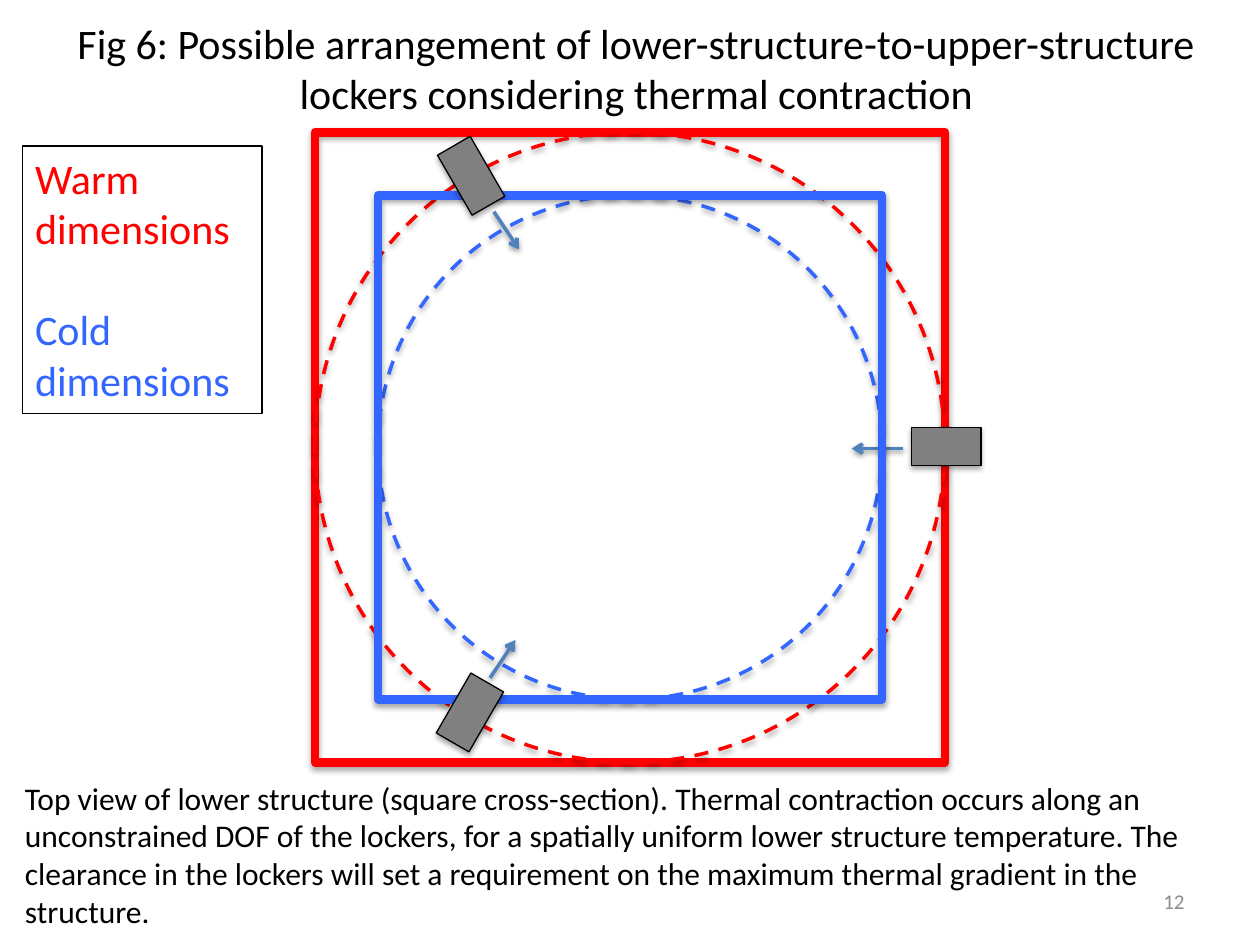
from lxml.etree import SubElement
from pptx import Presentation
from pptx.dml.color import RGBColor
from pptx.enum.dml import MSO_LINE_DASH_STYLE as DASH
from pptx.enum.shapes import MSO_CONNECTOR as CONNECTOR, MSO_SHAPE as SHAPE
from pptx.enum.text import MSO_ANCHOR as ANCHOR, MSO_AUTO_SIZE as FIT, PP_ALIGN as ALIGN
from pptx.oxml.ns import qn
from pptx.util import Inches, Pt

WIDTH, HEIGHT = 10, 7.5
WARM, COLD = "FF0000", "3366FF"
BLACK, GREY, STEEL, PALE = "000000", "808080", "4F81BD", "8C8C8C"

# Offsets from the diagram's centre, as shares of the warm side:
# locker centre, locker rotation, arrow start, arrow end
LOCKERS = [
    ((-0.252, -0.431), -30, (-0.216, -0.374), (-0.176, -0.314)),
    ((-0.254, 0.421), 30, (-0.222, 0.366), (-0.182, 0.306)),
    ((0.502, -0.001), 90, (0.434, 0.002), (0.352, 0.002)),
]
LOCKER_SIZE = (0.06, 0.11)
COLD_SHARE = 0.8


def rgb(value):
    return RGBColor.from_string(value)


def inches(*lengths):
    return [Inches(length) for length in lengths]


def cast_shadow(part, opacity, distance):
    """Soft shadow straight below the part; call after line and fill are set."""
    effects = SubElement(part._element.spPr, qn("a:effectLst"))
    shadow = SubElement(effects, qn("a:outerShdw"), blurRad=str(Pt(3.1)),
                        dist=str(Pt(distance)), dir="5400000", rotWithShape="0")
    tint = SubElement(shadow, qn("a:srgbClr"), val=BLACK)
    SubElement(tint, qn("a:alpha"), val=str(opacity * 1000))


def add_text(slide, box, paragraphs, size=18, align=ALIGN.LEFT,
             anchor=ANCHOR.TOP, border=None, gap=0):
    """Place (text, colour) paragraphs in a box, with a gap between them."""
    area = slide.shapes.add_textbox(*inches(*box))
    if border:
        area.line.color.rgb = rgb(border)
        area.line.width = Pt(0.75)
    frame = area.text_frame
    frame.word_wrap = True
    frame.auto_size = FIT.NONE
    frame.vertical_anchor = anchor
    for index, (text, color) in enumerate(paragraphs):
        paragraph = frame.add_paragraph() if index else frame.paragraphs[0]
        paragraph.alignment = align
        paragraph.space_before = Pt(gap if index else 0)
        run = paragraph.add_run()
        run.text = text
        run.font.name = "Calibri"
        run.font.size = Pt(size)
        run.font.color.rgb = rgb(color)


def add_part(slide, kind, center, size, line, weight, fill=None, dash=None, turn=0):
    (x, y), (width, height) = center, size
    part = slide.shapes.add_shape(
        kind, *inches(x - width / 2, y - height / 2, width, height))
    part.rotation = turn
    if fill:
        part.fill.solid()
        part.fill.fore_color.rgb = rgb(fill)
    else:
        part.fill.background()
    part.line.color.rgb = rgb(line)
    part.line.width = Pt(weight)
    if dash:
        part.line.dash_style = dash
    cast_shadow(part, 35, 1.8)


def add_arrow(slide, start, end):
    arrow = slide.shapes.add_connector(CONNECTOR.STRAIGHT, *inches(*start, *end))
    arrow.line.color.rgb = rgb(STEEL)
    arrow.line.width = Pt(2)
    SubElement(arrow.line._get_or_add_ln(), qn("a:tailEnd"), type="arrow")
    cast_shadow(arrow, 38, 1.6)


def add_diagram(slide, left, top, side):
    center = (left + side / 2, top + side / 2)

    def at(offset):
        return tuple(middle + share * side for middle, share in zip(center, offset))

    def square(color, share):
        add_part(slide, SHAPE.RECTANGLE, center, (side * share,) * 2, color, 5)

    def circle(color, share):
        add_part(slide, SHAPE.OVAL, center, (side * share,) * 2, color, 2, dash=DASH.DASH)

    # Warm and cold outlines, with the contraction arrows between them
    square(WARM, 1)
    circle(WARM, 1)
    circle(COLD, COLD_SHARE)
    for _, _, start, end in LOCKERS:
        add_arrow(slide, at(start), at(end))
    square(COLD, COLD_SHARE)

    # Lockers
    locker_size = [share * side for share in LOCKER_SIZE]
    for place, turn, _, _ in LOCKERS:
        add_part(slide, SHAPE.RECTANGLE, at(place), locker_size, BLACK, 0.75,
                 fill=GREY, turn=turn)


def add_legend(slide, box):
    add_text(slide, box, [("Warm dimensions", WARM), ("Cold dimensions", COLD)],
             size=24, border=BLACK, gap=29)


def add_captions(slide, left, width):
    # Title, explanation and page number
    add_text(slide, (left, 0.09, width, 0.91),
             [("Fig 6: Possible arrangement of lower-structure-to-upper-structure "
               "lockers considering thermal contraction", BLACK)],
             size=24, align=ALIGN.CENTER)
    add_text(slide, (left, 6.13, width, 1.31),
             [("Top view of lower structure (square cross-section). Thermal contraction "
               "occurs along an unconstrained DOF of the lockers, for a spatially uniform "
               "lower structure temperature. The clearance in the lockers will set a "
               "requirement on the maximum thermal gradient in the structure.", BLACK)])
    add_text(slide, (7.17, 6.95, 2.33, 0.4), [("12", PALE)],
             size=12, align=ALIGN.RIGHT, anchor=ANCHOR.MIDDLE)


def main():
    deck = Presentation()
    deck.slide_width, deck.slide_height = inches(WIDTH, HEIGHT)
    slide = deck.slides.add_slide(deck.slide_layouts[6])
    add_captions(slide, left=0.1, width=WIDTH - 0.1)
    add_diagram(slide, left=WIDTH / 4, top=1.05, side=WIDTH / 2)
    add_legend(slide, (0.18, 1.16, 1.9, 2.12))
    deck.save("out.pptx")


if __name__ == "__main__":
    main()
